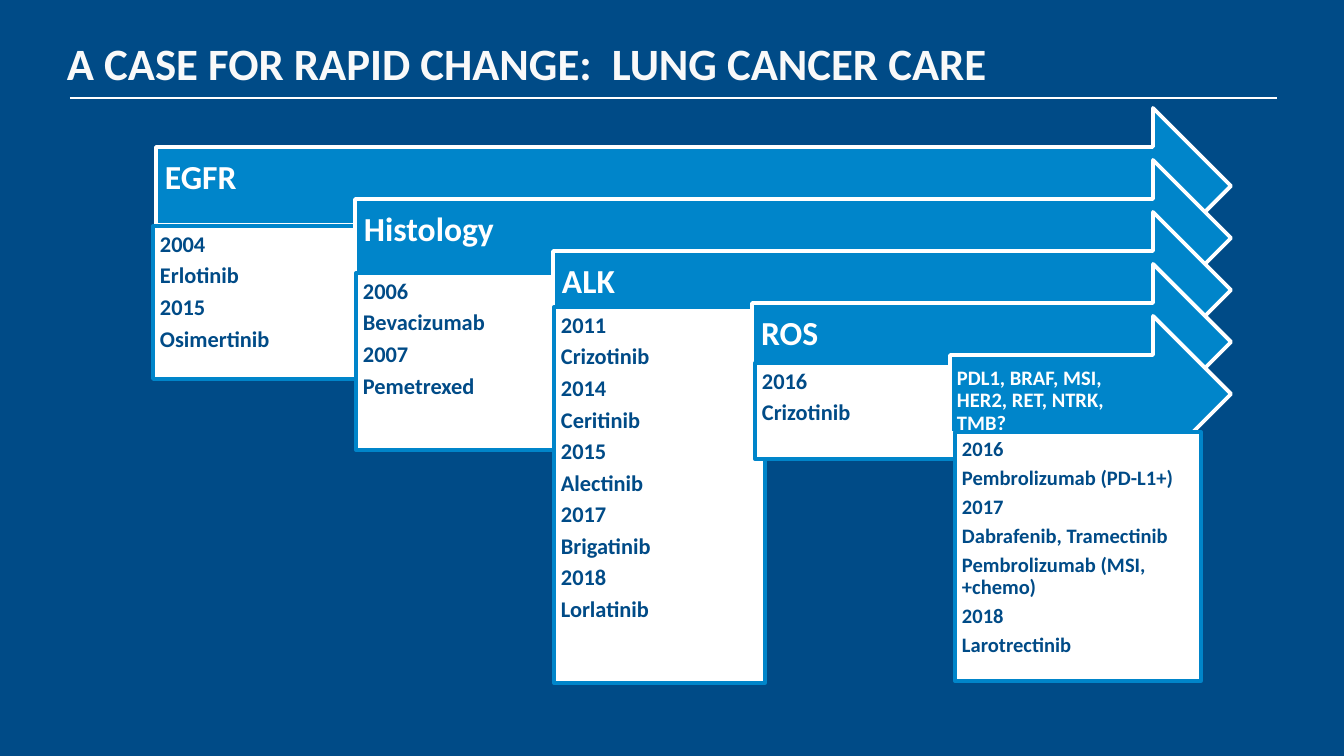
from dataclasses import dataclass

from lxml import etree
from pptx import Presentation
from pptx.dml.color import RGBColor
from pptx.enum.shapes import MSO_CONNECTOR, MSO_SHAPE
from pptx.enum.text import MSO_ANCHOR, MSO_AUTO_SIZE, PP_ALIGN
from pptx.oxml.ns import qn
from pptx.shapes.autoshape import Shape
from pptx.slide import Slide
from pptx.text.text import TextFrame
from pptx.util import Pt

ARROW = MSO_SHAPE.RIGHT_ARROW
RECT = MSO_SHAPE.RECTANGLE
LINE = MSO_CONNECTOR.STRAIGHT
LEFT = PP_ALIGN.LEFT
TOP = MSO_ANCHOR.TOP
MIDDLE = MSO_ANCHOR.MIDDLE
FIXED = MSO_AUTO_SIZE.NONE

WIDTH, HEIGHT = 1344, 756
SCALE = 9144000 / WIDTH
FONT = "Calibri"
NAVY, BLUE, WHITE, PALE = "004B87", "0085CA", "FFFFFF", "F9F9F9"

FIRST, STEP = 108, 52
TIP, DEPTH = 1231, 156

Box = tuple[int, int, int, int]


@dataclass(frozen=True)
class Stage:
    label: str
    left: int
    card: Box
    items: tuple[str, ...]
    size: int = 12
    head: int = 18
    pad: Box = (9, 9, 38, 24)
    anchor: MSO_ANCHOR = MIDDLE


STAGES = (
    Stage("EGFR", 156, (153, 226, 216, 153),
          ("2004", "Erlotinib", "2015", "Osimertinib")),
    Stage("Histology", 355, (356, 273, 200, 177),
          ("2006", "Bevacizumab", "2007", "Pemetrexed")),
    Stage("ALK", 553, (554, 307, 211, 376),
          ("2011", "Crizotinib", "2014", "Ceritinib", "2015", "Alectinib",
           "2017", "Brigatinib", "2018", "Lorlatinib")),
    Stage("ROS", 752, (755, 363, 202, 96), ("2016", "Crizotinib")),
    Stage("PDL1, BRAF, MSI, HER2, RET, NTRK, TMB?", 950, (955, 432, 246, 249),
          ("2016", "Pembrolizumab (PD-L1+)", "2017", "Dabrafenib, Tramectinib",
           "Pembrolizumab (MSI, +chemo)", "2018", "Larotrectinib"),
          size=11, head=11, pad=(7, 13, 38, 0), anchor=TOP),
)


def px(length: int) -> int:
    return round(length * SCALE)


def paint(code: str) -> RGBColor:
    return RGBColor.from_string(code)


def write(frame: TextFrame, lines: tuple[str, ...], *, size: int, color: str,
          pad: Box = (0, 0, 0, 0), anchor: MSO_ANCHOR = TOP,
          pitch: float = 1.0, after: float = 0) -> None:
    frame.auto_size = FIXED
    frame.word_wrap = True
    frame.vertical_anchor = anchor
    (frame.margin_left, frame.margin_top,
     frame.margin_right, frame.margin_bottom) = map(px, pad)
    for row, line in enumerate(lines):
        para = frame.add_paragraph() if row else frame.paragraphs[0]
        para.text = line
        para.alignment = LEFT
        para.line_spacing = pitch
        para.space_before = Pt(0)
        para.space_after = Pt(after)
        font = para.runs[0].font
        font.name = FONT
        font.size = Pt(size)
        font.bold = True
        font.color.rgb = paint(color)


def draw(slide: Slide, kind: MSO_SHAPE, box: Box, fill: str, edge: str) -> Shape:
    shape = slide.shapes.add_shape(kind, *map(px, box))
    shape.shadow.inherit = False
    shape.fill.solid()
    shape.fill.fore_color.rgb = paint(fill)
    shape.line.color.rgb = paint(edge)
    shape.line.width = Pt(2)
    return shape


def rule(slide: Slide, start: int, end: int, level: int) -> None:
    line = slide.shapes.add_connector(LINE, px(start), px(level), px(end), px(level))
    line.line.color.rgb = paint(WHITE)
    line.line.width = Pt(0.75)
    etree.SubElement(line._element.spPr, qn("a:effectLst"))


def place(slide: Slide, stage: Stage, top: int) -> None:
    arrow = draw(slide, ARROW, (stage.left, top, TIP - stage.left, DEPTH), BLUE, WHITE)
    write(arrow.text_frame, (stage.label,), size=stage.head, color=WHITE,
          pad=stage.pad, anchor=stage.anchor, pitch=0.9, after=stage.head * 0.33)
    card = draw(slide, RECT, stage.card, WHITE, BLUE)
    write(card.text_frame, stage.items, size=stage.size, color=NAVY,
          pad=(7, 7, 7, 7), pitch=0.9, after=stage.size * 0.33)


def main() -> None:
    deck = Presentation()
    deck.slide_width, deck.slide_height = px(WIDTH), px(HEIGHT)
    slide = deck.slides.add_slide(deck.slide_layouts[5])
    slide.background.fill.solid()
    slide.background.fill.fore_color.rgb = paint(NAVY)

    rule(slide, 70, 1277, 98)
    title = slide.shapes.title
    title.left, title.top, title.width, title.height = map(px, (67, 36, 1210, 54))
    write(title.text_frame, ("A CASE FOR RAPID CHANGE:  LUNG CANCER CARE",),
          size=24, color=PALE, anchor=MIDDLE)

    for row, stage in enumerate(STAGES):
        place(slide, stage, FIRST + row * STEP)
    deck.save("out.pptx")


if __name__ == "__main__":
    main()
